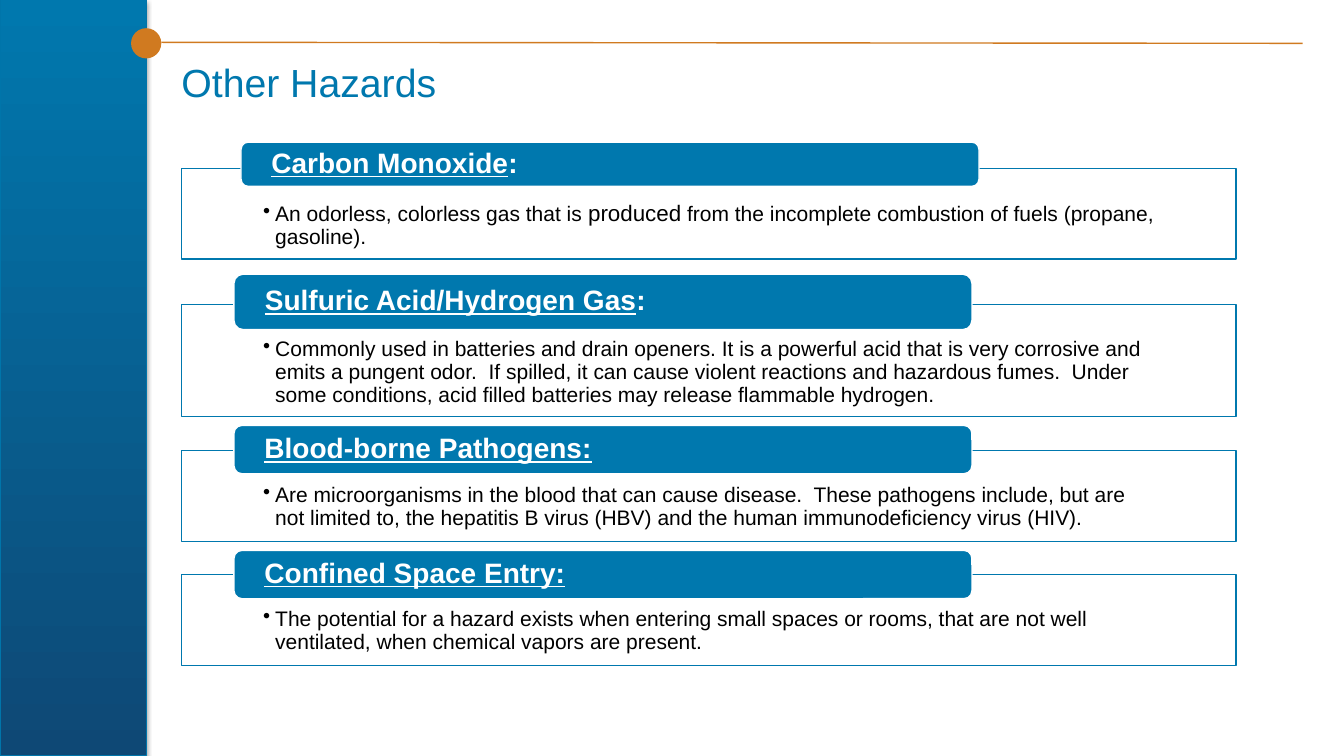
from lxml.etree import SubElement
from pptx import Presentation
from pptx.dml.color import RGBColor
from pptx.enum.shapes import MSO_CONNECTOR as Connector, MSO_SHAPE as Shape
from pptx.enum.text import MSO_ANCHOR as Anchor, MSO_AUTO_SIZE as AutoSize, PP_ALIGN as Align
from pptx.oxml.ns import qn
from pptx.util import Emu, Pt

PX = 9144
FONT = "Arial"
BLUE, NAVY, ORANGE, WHITE, BLACK = "0078AE", "0E4875", "D07A20", "FFFFFF", "000000"

HAZARDS = [
    ((180, 167, 1046, 90), (239, 141, 732, 44),
     [("Carbon Monoxide", True), (":", False)],
     [("An odorless, colorless gas that is ", 15), ("produced", 16),
      (" from the incomplete combustion of fuels (propane, gasoline).", 15)]),
    ((180, 302, 1046, 111), (232, 272, 732, 55),
     [("Sulfuric Acid/Hydrogen Gas", True), (":", False)],
     [("Commonly used in batteries and drain openers. It is a powerful acid that is very "
       "corrosive and emits a pungent odor.  If spilled, it can cause violent reactions and "
       "hazardous fumes.  Under some conditions, acid filled batteries may release "
       "flammable hydrogen.", 15)]),
    ((180, 447, 1046, 90), (232, 422, 732, 48),
     [("Blood-borne Pathogens:", True)],
     [("Are microorganisms in the blood that can cause disease.  These pathogens include, "
       "but are not limited to, the hepatitis B virus (HBV) and the human immunodeficiency "
       "virus (HIV).", 15)]),
    ((180, 570, 1046, 90), (232, 546, 732, 48),
     [("Confined Space Entry:", True)],
     [("The potential for a hazard exists when entering small spaces or rooms, that are not "
       "well ventilated, when chemical vapors are present.", 15)]),
]


def px(length):
    return Emu(length * PX)


def color(value):
    return RGBColor.from_string(value)


def add_shape(slide, kind, box, fill=None, line=None, width=1):
    shape = slide.shapes.add_shape(kind, *map(px, box))
    shape.shadow.inherit = False
    if fill:
        shape.fill.solid()
        shape.fill.fore_color.rgb = color(fill)
    if line:
        shape.line.color.rgb = color(line)
        shape.line.width = Pt(width)
    else:
        shape.line.fill.background()
    return shape


def set_frame(shape, insets, anchor):
    frame = shape.text_frame
    frame.word_wrap = True
    frame.auto_size = AutoSize.NONE
    frame.vertical_anchor = anchor
    frame.margin_left, frame.margin_top, frame.margin_right, frame.margin_bottom = map(px, insets)
    paragraph = frame.paragraphs[0]
    paragraph.alignment = Align.LEFT
    paragraph.line_spacing = 0.9
    return paragraph


def add_run(paragraph, text, size, text_color, bold=False, underline=False):
    run = paragraph.add_run()
    run.text = text
    run.font.name = FONT
    run.font.size = Pt(size)
    run.font.color.rgb = color(text_color)
    run.font.bold = bold
    run.font.underline = underline


def add_bullet(paragraph, indent):
    properties = paragraph._p.get_or_add_pPr()
    properties.set("marL", str(px(indent)))
    properties.set("indent", str(px(-indent)))
    SubElement(properties, qn("a:buChar"), char="•")


def add_sidebar(slide, box):
    left, top, width, height = box
    sidebar = add_shape(slide, Shape.RECTANGLE, box, line="0075AA", width=0.75)
    sidebar.fill.gradient()
    sidebar.fill.gradient_angle = 90
    for stop, value in zip(sidebar.fill.gradient_stops, (NAVY, BLUE)):
        stop.color.rgb = color(value)
    effects = sidebar._element.spPr.find(qn("a:effectLst"))
    shadow = SubElement(effects, qn("a:outerShdw"), blurRad=str(Pt(3.1)),
                        dist=str(Pt(1.8)), dir="5400000", rotWithShape="0")
    shade = SubElement(shadow, qn("a:srgbClr"), val=BLACK)
    SubElement(shade, qn("a:alpha"), val="35000")


def add_header_rule(slide, box):
    left, top, width, height = box
    middle = top + height // 2
    rule = slide.shapes.add_connector(
        Connector.STRAIGHT, px(left + height), px(middle - 1), px(left + width), px(middle))
    rule.line.color.rgb = color(ORANGE)
    rule.line.width = Pt(1)
    SubElement(rule._element.spPr, qn("a:effectLst"))
    add_shape(slide, Shape.OVAL, (left, top, height, height), fill=ORANGE)


def add_title(slide, box):
    title = slide.shapes.title
    title.left, title.top, title.width, title.height = map(px, box)
    paragraph = set_frame(title, (0, 0, 0, 0), Anchor.TOP)
    add_run(paragraph, "Other Hazards", 28, BLUE)


def add_hazard(slide, panel_box, banner_box, heading, description):
    panel = add_shape(slide, Shape.RECTANGLE, panel_box, WHITE, BLUE)
    fill_color = panel._element.spPr.find(qn("a:solidFill"))[0]
    SubElement(fill_color, qn("a:alpha"), val="90000")
    paragraph = set_frame(panel, (81, 34, 81, 12), Anchor.TOP)
    add_bullet(paragraph, 12)
    for text, size in description:
        add_run(paragraph, text, size, BLACK)

    banner = add_shape(slide, Shape.ROUNDED_RECTANGLE, banner_box, BLUE, WHITE)
    paragraph = set_frame(banner, (28, 0, 28, 0), Anchor.MIDDLE)
    for text, underline in heading:
        add_run(paragraph, text, 20, WHITE, bold=True, underline=underline)


def main():
    presentation = Presentation()
    presentation.slide_width, presentation.slide_height = px(1333), px(750)
    slide = presentation.slides.add_slide(presentation.slide_layouts[5])
    add_sidebar(slide, (0, 0, 145, 750))
    add_header_rule(slide, (130, 28, 1162, 30))
    add_title(slide, (180, 63, 1112, 55))
    for hazard in HAZARDS:
        add_hazard(slide, *hazard)
    presentation.save("out.pptx")


if __name__ == "__main__":
    main()
